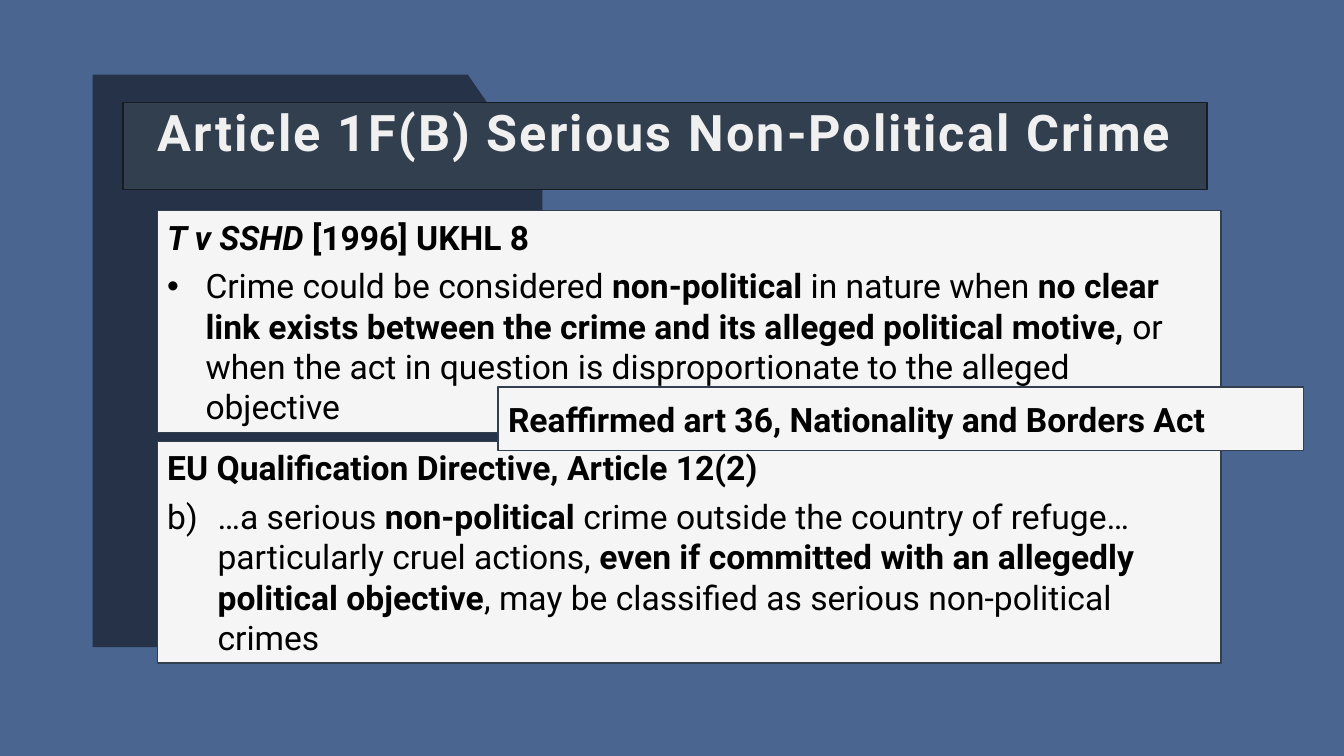
from dataclasses import dataclass

from lxml import etree
from pptx import Presentation
from pptx import util as u
from pptx.dml.color import RGBColor
from pptx.enum import shapes, text
from pptx.oxml.ns import qn

PX = 9144
PALE, SLATE, INK = "F4F5F4", "323F4F", "000000"
LEFT, MIDDLE = text.PP_ALIGN.LEFT, text.MSO_ANCHOR.MIDDLE


@dataclass
class Run:
    text: str
    bold: bool = False
    italic: bool = False


@dataclass
class Para:
    runs: list[Run]
    indent: int = 0
    bullet: tuple[str, dict[str, str]] | None = None


@dataclass
class Box:
    x: int
    y: int
    w: int
    h: int
    paras: list[Para]
    fill: str = PALE
    line: str = SLATE
    color: str = INK
    size: int = 24
    tracking: int = 0
    spacing: float = 1.0
    align: text.PP_ALIGN = LEFT
    anchor: text.MSO_ANCHOR = MIDDLE


BOXES = [
    Box(156, 209, 1055, 220, [
        Para([Run("T v SSHD ", True, True), Run("[1996] UKHL 8", True)]),
        Para([
            Run("Crime could be considered "),
            Run("non-political ", True),
            Run("in nature when "),
            Run("no clear link exists between the crime and its alleged political motive, ", True),
            Run("or when the act in question is disproportionate to the alleged objective"),
        ], 38, ("a:buChar", {"char": "•"})),
    ]),
    Box(122, 102, 1075, 86, [Para([Run("Article 1F(B) Serious Non-Political Crime", True)])],
        SLATE, "161C23", "F1F0F0", 36, 150, 0.9, text.PP_ALIGN.CENTER, text.MSO_ANCHOR.TOP),
    Box(156, 438, 1055, 220, [
        Para([Run("EU Qualification Directive, Article 12(2)", True)]),
        Para([
            Run("…a serious "),
            Run("non-political ", True),
            Run("crime outside the country of refuge…particularly cruel actions, "),
            Run("even if committed with an allegedly political objective", True),
            Run(", may be classified as serious non-political crimes"),
        ], 50, ("a:buAutoNum", {"type": "alphaLcParenR", "startAt": "2"})),
    ]),
    Box(494, 384, 799, 63, [Para([Run("Reaffirmed art 36, Nationality and Borders Act", True)])]),
]


def rgb(value: str) -> RGBColor:
    return RGBColor.from_string(value)


def paint(sp, fill: str, line: str | None = None) -> None:
    sp.shadow.inherit = False
    sp.fill.solid()
    sp.fill.fore_color.rgb = rgb(fill)
    if line:
        sp.line.color.rgb = rgb(line)
        sp.line.width = u.Pt(1)
    else:
        sp.line.fill.background()


def draw_panel(slide) -> None:
    fb = slide.shapes.build_freeform(92, 74, scale=PX)
    fb.add_line_segments([(464, 74), (538, 181), (538, 642), (92, 642)])
    paint(fb.convert_to_shape(), "253248")


def write_para(p, para: Para, box: Box) -> None:
    p.alignment = box.align
    p.line_spacing = box.spacing
    if para.bullet:
        p.space_before = u.Pt(6)
        pPr = p._p.get_or_add_pPr()
        pPr.set("marL", str(para.indent * PX))
        pPr.set("indent", str(-para.indent * PX))
        tag, attrs = para.bullet
        etree.SubElement(pPr, qn("a:buFont"), typeface="Arial" if tag == "a:buChar" else "Roboto")
        etree.SubElement(pPr, qn(tag), attrs)
    for run in para.runs:
        r = p.add_run()
        r.text = run.text
        r.font.name = "Roboto"
        r.font.size = u.Pt(box.size)
        r.font.bold, r.font.italic = run.bold, run.italic
        r.font.color.rgb = rgb(box.color)
        if box.tracking:
            r.font._element.set("spc", str(box.tracking))


def draw_box(slide, box: Box) -> None:
    sp = slide.shapes.add_shape(shapes.MSO_SHAPE.RECTANGLE,
                                *(v * PX for v in (box.x, box.y, box.w, box.h)))
    paint(sp, box.fill, box.line)
    tf = sp.text_frame
    tf.word_wrap = True
    tf.vertical_anchor = box.anchor
    for i, para in enumerate(box.paras):
        write_para(tf.add_paragraph() if i else tf.paragraphs[0], para, box)


def main() -> None:
    """Build the slide on serious non-political crime."""
    prs = Presentation()
    prs.slide_width, prs.slide_height = 1333 * PX, 750 * PX
    slide = prs.slides.add_slide(prs.slide_layouts[6])
    slide.background.fill.solid()
    slide.background.fill.fore_color.rgb = rgb("4A6590")
    draw_panel(slide)
    for box in BOXES:
        draw_box(slide, box)
    prs.save("out.pptx")


if __name__ == "__main__":
    main()
